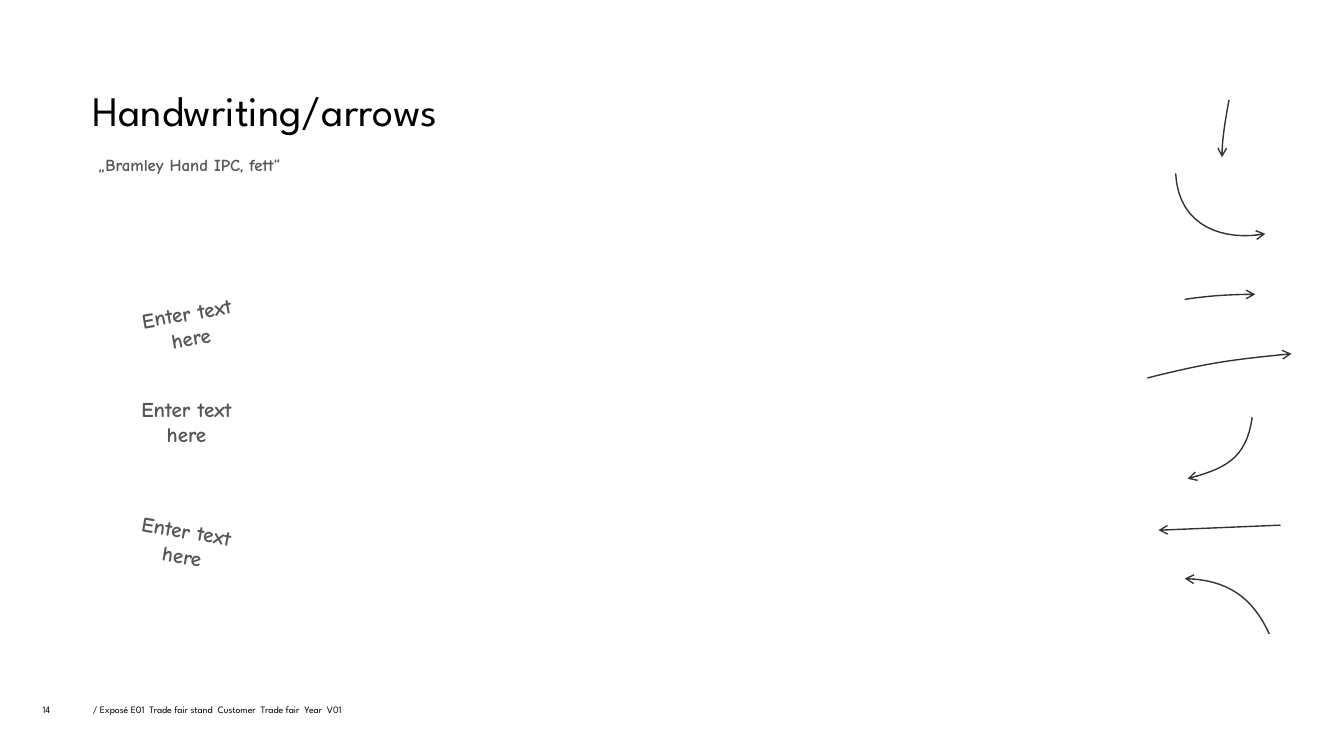
from lxml.etree import SubElement
from pptx import Presentation
from pptx.dml.color import RGBColor
from pptx.enum.shapes import MSO_CONNECTOR
from pptx.enum.text import MSO_ANCHOR, MSO_AUTO_SIZE, PP_ALIGN
from pptx.oxml.ns import qn
from pptx.util import Inches, Pt

BLACK = RGBColor(0x00, 0x00, 0x00)
GREY = RGBColor(0x56, 0x56, 0x56)
ARROW_GREY = RGBColor(0x33, 0x33, 0x33)
PRINT_FONT = "League Spartan"
HAND_FONT = "Comic Neue"
CURVE_STEPS = 16

# Left, top and rotation of the handwritten notes
NOTES = [(1.2, 2.93, 350), (1.2, 3.88, 0), (1.2, 5.09, 10)]

# Start, two control points and end of each curved arrow
CURVED_ARROWS = [
    [(12.19, 0.99), (12.15, 1.21), (12.12, 1.39), (12.12, 1.56)],
    [(11.66, 1.72), (11.69, 2.27), (12.16, 2.39), (12.55, 2.32)],
    [(11.75, 2.97), (11.95, 2.94), (12.16, 2.92), (12.45, 2.92)],
    [(11.38, 3.75), (11.98, 3.6), (12.2, 3.57), (12.81, 3.51)],
    [(12.42, 4.14), (12.36, 4.57), (12.13, 4.65), (11.78, 4.75)],
    [(12.59, 6.29), (12.42, 5.92), (12.17, 5.75), (11.75, 5.74)],
]


def add_text(slide, text, left, top, width, height, *, size, font=PRINT_FONT,
             color=BLACK, bold=False, align=PP_ALIGN.LEFT, anchor=MSO_ANCHOR.TOP,
             inset_left=0, inset_right=0.1, line_spacing=1.0, rotation=0,
             wrap=True, grow=False):
    box = slide.shapes.add_textbox(
        Inches(left), Inches(top), Inches(width), Inches(height))
    box.rotation = rotation
    frame = box.text_frame
    frame.word_wrap = wrap
    frame.auto_size = MSO_AUTO_SIZE.SHAPE_TO_FIT_TEXT if grow else MSO_AUTO_SIZE.NONE
    frame.vertical_anchor = anchor
    frame.margin_left, frame.margin_right = Inches(inset_left), Inches(inset_right)
    frame.margin_top = frame.margin_bottom = Inches(0.05)
    paragraph = frame.paragraphs[0]
    paragraph.alignment = align
    paragraph.line_spacing = line_spacing
    run = paragraph.add_run()
    run.text = text
    run.font.name = font
    run.font.size = Pt(size)
    run.font.bold = bold
    run.font.color.rgb = color


def add_handwriting(slide, text, left, top, width, height, **text_format):
    add_text(slide, text, left, top, width, height, font=HAND_FONT, color=GREY,
             bold=True, inset_right=0, grow=True, **text_format)


def style_arrow(shape):
    shape.line.color.rgb = ARROW_GREY
    shape.line.width = Pt(1)
    SubElement(shape.line._get_or_add_ln(), qn("a:tailEnd"), type="arrow")


def curve_point(controls, position):
    rest = 1 - position
    weights = (rest ** 3, 3 * rest ** 2 * position,
               3 * rest * position ** 2, position ** 3)
    return tuple(Inches(sum(weight * value for weight, value in zip(weights, axis)))
                 for axis in zip(*controls))


def add_curved_arrow(slide, controls):
    points = [curve_point(controls, step / CURVE_STEPS)
              for step in range(CURVE_STEPS + 1)]
    builder = slide.shapes.build_freeform(*points[0])
    builder.add_line_segments(points[1:], close=False)
    arrow = builder.convert_to_shape()
    arrow.shadow.inherit = False
    arrow.fill.background()
    style_arrow(arrow)


def add_straight_arrow(slide, start, end):
    ends = [Inches(value) for value in (*start, *end)]
    arrow = slide.shapes.add_connector(MSO_CONNECTOR.STRAIGHT, *ends)
    style_arrow(arrow)
    SubElement(arrow._element.spPr, qn("a:effectLst"))


def main():
    presentation = Presentation()
    presentation.slide_width = Inches(13.33)
    presentation.slide_height = Inches(7.5)
    slide = presentation.slides.add_slide(presentation.slide_layouts[6])

    # Footer
    add_text(slide, "/ Exposé E01  Trade fair stand  Customer  Trade fair  Year  V01",
             0.92, 6.93, 5.51, 0.4, size=7)
    add_text(slide, "14", 0, 6.93, 0.92, 0.4, size=7,
             align=PP_ALIGN.CENTER, inset_left=0.1)

    # Title and font note
    add_text(slide, "Handwriting/arrows", 0.92, 0.4, 11.5, 1.45, size=30,
             anchor=MSO_ANCHOR.MIDDLE, line_spacing=0.9)
    add_handwriting(slide, "„Bramley Hand IPC, fett“", 0.97, 1.49, 1.81, 0.3,
                    size=12, wrap=False)

    # Handwritten notes
    for left, top, rotation in NOTES:
        add_handwriting(slide, "Enter text here", left, top, 1.3, 0.35, size=15,
                        align=PP_ALIGN.CENTER, rotation=rotation)

    # Arrows
    for controls in CURVED_ARROWS:
        add_curved_arrow(slide, controls)
    add_straight_arrow(slide, (12.7, 5.21), (11.49, 5.26))

    presentation.save("out.pptx")


if __name__ == "__main__":
    main()
